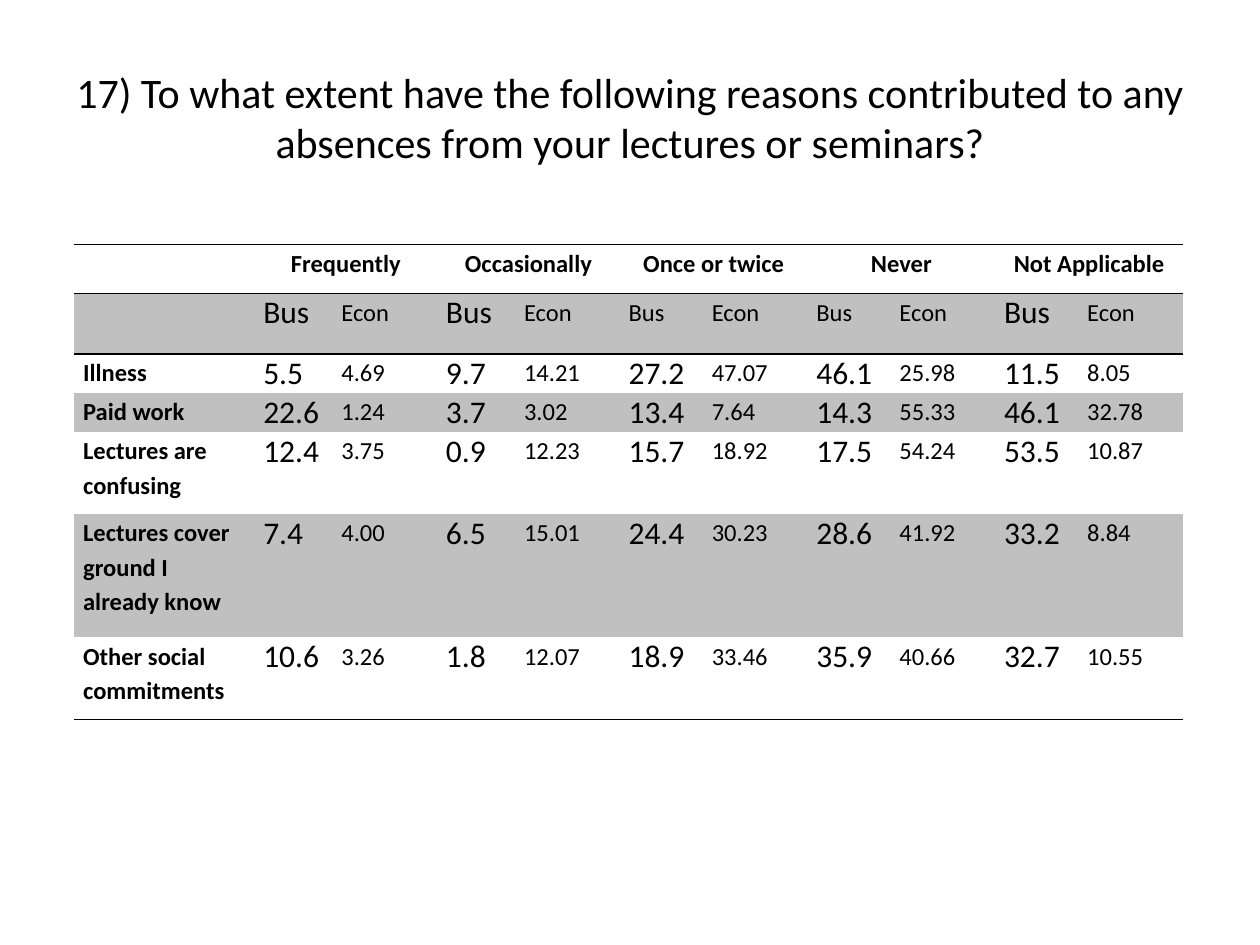
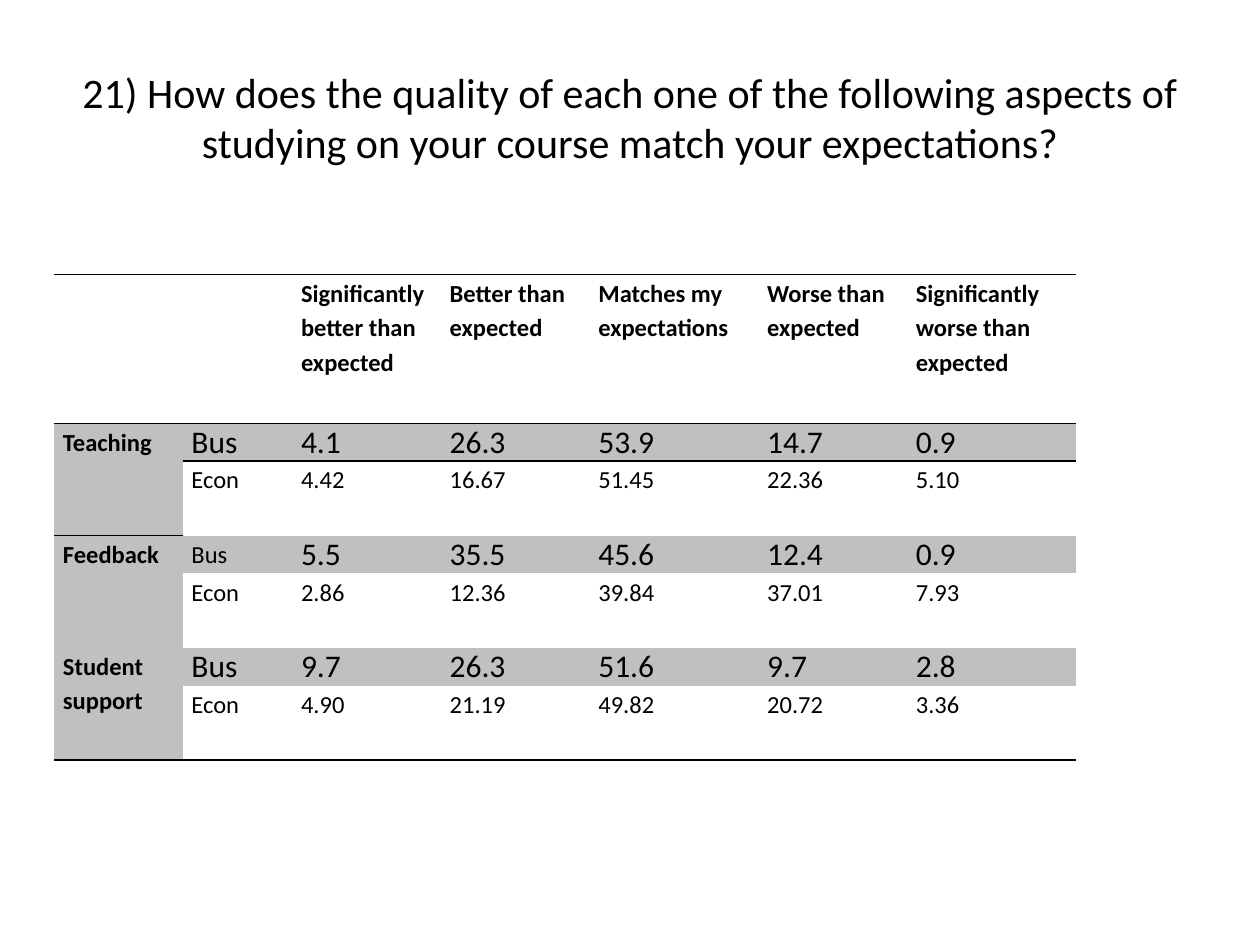
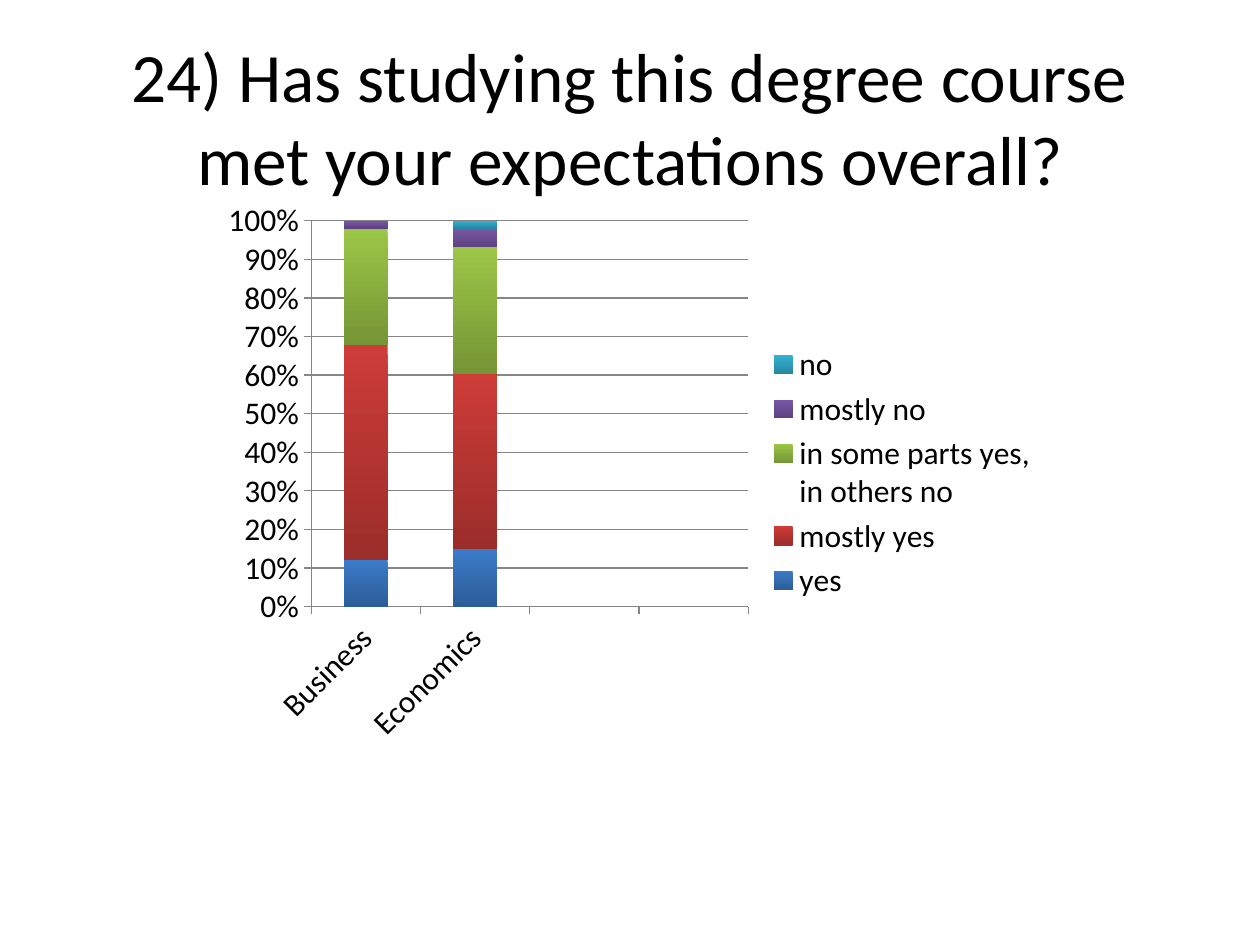
from lxml import etree
from pptx import Presentation
from pptx.chart.data import CategoryChartData
from pptx.dml.color import RGBColor
from pptx.enum.chart import XL_CHART_TYPE, XL_LEGEND_POSITION, XL_TICK_MARK
from pptx.enum.text import MSO_ANCHOR, PP_ALIGN
from pptx.oxml import parse_xml
from pptx.oxml.ns import nsdecls, qn
from pptx.util import Inches, Pt

CENTER, LEFT = PP_ALIGN.CENTER, PP_ALIGN.LEFT
MIDDLE, TOP = MSO_ANCHOR.MIDDLE, MSO_ANCHOR.TOP
STACKED_100 = XL_CHART_TYPE.COLUMN_STACKED_100
LEGEND_RIGHT = XL_LEGEND_POSITION.RIGHT
TICK_OUTSIDE = XL_TICK_MARK.OUTSIDE

FONT = "Calibri"
BLACK = RGBColor(0x00, 0x00, 0x00)
BAND_GRAY = RGBColor(0xC0, 0xC0, 0xC0)
AXIS_GRAY = RGBColor(0x86, 0x86, 0x86)
NO_GRID_STYLE = "{2D5ABB26-0587-4C30-8999-92F81FD0307C}"

ABSENCE_TITLE = ("17) To what extent have the following reasons contributed to any "
                 "absences from your lectures or seminars?")
FREQUENCIES = ["Frequently", "Occasionally", "Once or twice", "Never", "Not Applicable"]
SMALL_BUS_FREQUENCIES = ["Once or twice", "Never"]
# Reason, then a Bus and an Econ value for each frequency
ABSENCE_REASONS = [
    ["Illness", "5.5", "4.69", "9.7", "14.21", "27.2", "47.07", "46.1", "25.98", "11.5", "8.05"],
    ["Paid work", "22.6", "1.24", "3.7", "3.02", "13.4", "7.64", "14.3", "55.33", "46.1", "32.78"],
    ["Lectures are confusing",
     "12.4", "3.75", "0.9", "12.23", "15.7", "18.92", "17.5", "54.24", "53.5", "10.87"],
    ["Lectures cover ground I already know",
     "7.4", "4.00", "6.5", "15.01", "24.4", "30.23", "28.6", "41.92", "33.2", "8.84"],
    ["Other social commitments",
     "10.6", "3.26", "1.8", "12.07", "18.9", "33.46", "35.9", "40.66", "32.7", "10.55"],
]
ABSENCE_WIDTHS = [1.43] + [0.62, 0.83] * 2 + [0.66, 0.83] * 3
ABSENCE_HEIGHTS = [0.39, 0.48, 0.31, 0.31, 0.65, 0.98, 0.65]

QUALITY_TITLE = ("21) How does the quality of each one of the following aspects of "
                 "studying on your course match your expectations?")
RATINGS = ["Significantly better than expected", "Better than expected",
           "Matches my expectations", "Worse than expected",
           "Significantly worse than expected"]
SMALL_BUS_ASPECT = "Feedback"
# Aspect, Bus values, Econ values
QUALITY_ASPECTS = [
    ("Teaching", ["4.1", "26.3", "53.9", "14.7", "0.9"],
     ["4.42", "16.67", "51.45", "22.36", "5.10"]),
    ("Feedback", ["5.5", "35.5", "45.6", "12.4", "0.9"],
     ["2.86", "12.36", "39.84", "37.01", "7.93"]),
    ("Student support", ["9.7", "26.3", "51.6", "9.7", "2.8"],
     ["4.90", "21.19", "49.82", "20.72", "3.36"]),
]
QUALITY_WIDTHS = [1.02, 0.87, 1.18, 1.18, 1.34, 1.18, 1.34]
QUALITY_HEIGHTS = [1.18] + [0.29, 0.59] * 3

OVERALL_TITLE = "24) Has studying this degree course met your expectations overall?"
COURSES = ["Business", "Economics", "", ""]
# Answer, values by course, bar colour at the top and at the bottom
ANSWERS = [
    ("yes", (12, 15, None, None), RGBColor(0x3C, 0x7B, 0xC9), RGBColor(0x2C, 0x5D, 0x98)),
    ("mostly yes", (55, 46, None, None), RGBColor(0xCD, 0x3C, 0x38), RGBColor(0x9B, 0x2D, 0x2A)),
    ("in some parts yes, in others no", (30, 33, None, None),
     RGBColor(0x9C, 0xC6, 0x47), RGBColor(0x76, 0x95, 0x35)),
    ("mostly no", (2, 5, None, None), RGBColor(0x7B, 0x58, 0xA7), RGBColor(0x5D, 0x41, 0x7E)),
    ("no", (0, 2, None, None), RGBColor(0x35, 0xB2, 0xD4), RGBColor(0x27, 0x87, 0xA0)),
]
PLOT_AREA = {"x": 0.12, "y": 0.05, "w": 0.52, "h": 0.69}


def write_text(text_frame, text, size=14, bold=False, align=LEFT, spacing=None):
    paragraph = text_frame.paragraphs[0]
    paragraph.alignment = align
    if spacing:
        paragraph.line_spacing = spacing
    run = paragraph.add_run()
    run.text = text
    run.font.name, run.font.size, run.font.bold = FONT, Pt(size), bold
    run.font.color.rgb = BLACK


def add_titled_slide(presentation, title, size=24):
    slide = presentation.slides.add_slide(presentation.slide_layouts[6])
    box = slide.shapes.add_textbox(Inches(0.5), Inches(0.3), Inches(9), Inches(1.25))
    box.text_frame.word_wrap = True
    box.text_frame.vertical_anchor = MIDDLE
    write_text(box.text_frame, title, size=size, align=CENTER)
    return slide


def add_border(cell, side):
    properties = cell._tc.get_or_add_tcPr()
    properties.insert(0, parse_xml(
        f'<a:{side} {nsdecls("a")} w="12700"><a:solidFill><a:srgbClr val="{BLACK}"/>'
        f'</a:solidFill></a:{side}>'))


def add_survey_table(slide, left, top, widths, heights, grid, spans, large, shaded):
    """spans: (row, column, last row, last column); large, shaded: sets of (row, column)."""
    frame = slide.shapes.add_table(len(heights), len(widths), Inches(left), Inches(top),
                                   Inches(sum(widths)), Inches(sum(heights)))
    table = frame.table
    table._tbl.tblPr.find(qn("a:tableStyleId")).text = NO_GRID_STYLE
    table.first_row = table.horz_banding = False
    for column, width in zip(table.columns, widths):
        column.width = Inches(width)
    for row, height in zip(table.rows, heights):
        row.height = Inches(height)
    for first_row, first_column, last_row, last_column in spans:
        table.cell(first_row, first_column).merge(table.cell(last_row, last_column))

    last_rows = {(row, column): last_row for row, column, last_row, _ in spans}
    wide_headers = {(row, column) for row, column, _, end in spans if end > column}
    for row, texts in enumerate(grid):
        for column, text in enumerate(texts):
            place = (row, column)
            cell = table.cell(row, column)
            cell.margin_left = cell.margin_right = Inches(0.07)
            cell.margin_top = cell.margin_bottom = 0
            cell.vertical_anchor = TOP
            if place in shaded:
                cell.fill.solid()
                cell.fill.fore_color.rgb = BAND_GRAY
            else:
                cell.fill.background()
            if row == 0 or last_rows.get(place, row) == len(grid) - 1:
                add_border(cell, "a:lnB"[2:])
            if row <= 1:
                add_border(cell, "lnT")
            if text:
                is_large = place in large
                write_text(cell.text_frame, text, size=18 if is_large else 14,
                           bold=row == 0 or column == 0,
                           align=CENTER if place in wide_headers else LEFT,
                           spacing=None if is_large else 1.15)


def add_absence_slide(presentation):
    slide = add_titled_slide(presentation, ABSENCE_TITLE)
    header = [""]
    for frequency in FREQUENCIES:
        header += [frequency, ""]
    grid = [header, [""] + ["Bus", "Econ"] * len(FREQUENCIES)] + ABSENCE_REASONS
    bus_columns = range(1, len(header), 2)
    spans = [(0, column, 0, column + 1) for column in bus_columns]
    large = {(row, column) for row in range(1, len(grid)) for column in bus_columns
             if row > 1 or header[column] not in SMALL_BUS_FREQUENCIES}
    shaded = {(row, column) for row in range(1, len(grid), 2) for column in range(len(header))}
    add_survey_table(slide, 0.59, 1.94, ABSENCE_WIDTHS, ABSENCE_HEIGHTS,
                     grid, spans, large, shaded)


def add_quality_slide(presentation):
    slide = add_titled_slide(presentation, QUALITY_TITLE)
    grid = [["", ""] + RATINGS]
    for aspect, bus, econ in QUALITY_ASPECTS:
        grid += [[aspect, "Bus"] + bus, ["", "Econ"] + econ]
    bus_rows = range(1, len(grid), 2)
    columns = range(len(grid[0]))
    spans = [(row, 0, row + 1, 0) for row in bus_rows]
    large = {(row, column) for row in bus_rows for column in columns[1:]
             if column > 1 or grid[row][0] != SMALL_BUS_ASPECT}
    shaded = {(row, column) for row in range(1, len(grid)) for column in columns
              if row in bus_rows or column == 0}
    add_survey_table(slide, 0.43, 2.18, QUALITY_WIDTHS, QUALITY_HEIGHTS,
                     grid, spans, large, shaded)


def place_plot_area(chart):
    plot_area = chart._chartSpace.chart.plotArea
    for layout in plot_area.findall(qn("c:layout")):
        plot_area.remove(layout)
    layout = etree.Element(qn("c:layout"))
    manual = etree.SubElement(layout, qn("c:manualLayout"))
    settings = {"layoutTarget": "inner", "xMode": "edge", "yMode": "edge", **PLOT_AREA}
    for name, value in settings.items():
        etree.SubElement(manual, qn(f"c:{name}")).set("val", str(value))
    plot_area.insert(0, layout)


def add_overall_slide(presentation):
    slide = add_titled_slide(presentation, OVERALL_TITLE, size=39.6)
    data = CategoryChartData()
    data.categories = COURSES
    for answer, values, _, _ in ANSWERS:
        data.add_series(answer, values)
    chart = slide.shapes.add_chart(STACKED_100, Inches(1.67), Inches(1.53),
                                   Inches(6.67), Inches(4.44), data).chart
    chart.has_title = False
    chart.font.name, chart.font.size, chart.font.color.rgb = FONT, Pt(18), BLACK
    chart.has_legend = True
    chart.legend.position = LEGEND_RIGHT
    chart.legend.include_in_layout = False

    plot = chart.plots[0]
    plot.gap_width, plot.overlap, plot.vary_by_categories = 150, 100, False
    for series, (_, _, top_color, bottom_color) in zip(plot.series, ANSWERS):
        fill = series.format.fill
        fill.gradient()
        fill.gradient_angle = 270
        for stop, color in zip(fill.gradient_stops, (top_color, bottom_color)):
            stop.color.rgb = color

    for axis in (chart.category_axis, chart.value_axis):
        axis.major_tick_mark = TICK_OUTSIDE
        axis.format.line.color.rgb = AXIS_GRAY
        axis.format.line.width = Pt(0.75)
        axis.tick_labels.font.size = Pt(18)
    chart.category_axis._element.txPr.bodyPr.set("rot", "-2700000")
    value_axis = chart.value_axis
    value_axis.has_major_gridlines = True
    value_axis.major_gridlines.format.line.color.rgb = AXIS_GRAY
    value_axis.major_gridlines.format.line.width = Pt(0.75)
    value_axis.tick_labels.number_format = "0%"
    value_axis.tick_labels.number_format_is_linked = False
    place_plot_area(chart)


def main():
    presentation = Presentation()
    presentation.slide_width, presentation.slide_height = Inches(10), Inches(7.5)
    add_absence_slide(presentation)
    add_quality_slide(presentation)
    add_overall_slide(presentation)
    presentation.save("out.pptx")


if __name__ == "__main__":
    main()
